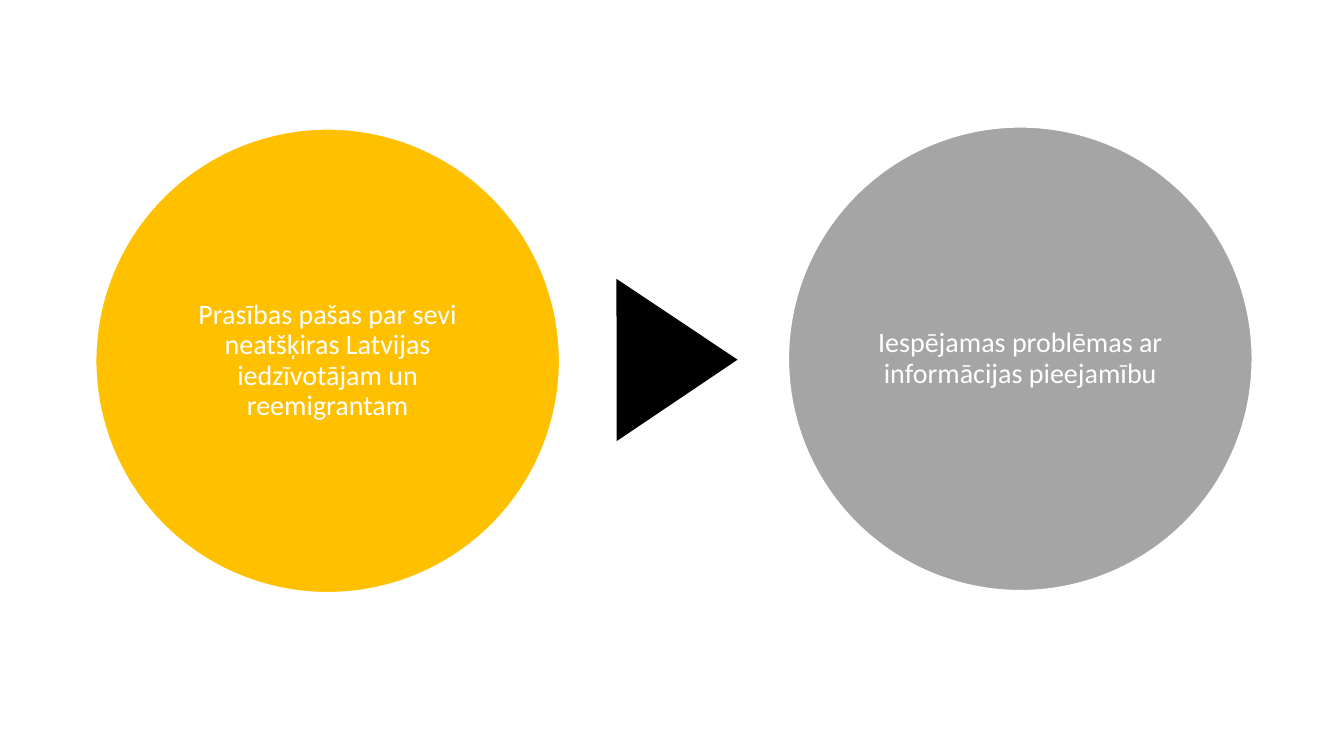
from pptx import Presentation
from pptx.dml.color import RGBColor
from pptx.enum.shapes import MSO_SHAPE
from pptx.enum.text import MSO_ANCHOR, PP_ALIGN
from pptx.util import Inches, Pt

WHITE = RGBColor(0xFF, 0xFF, 0xFF)
BLACK = RGBColor(0, 0, 0)
GOLD = RGBColor(0xFF, 0xC0, 0x00)
GRAY = RGBColor(0xA5, 0xA5, 0xA5)

CIRCLES = [
    (0.95, 1.28, GOLD, "Prasības pašas par sevi neatšķiras Latvijas iedzīvotājam un reemigrantam"),
    (7.82, 1.26, GRAY, "Iespējamas problēmas ar informācijas pieejamību"),
]
DIAMETER = 4.6
ARROW = (5.91, 2.97, 1.61, 1.2)


def add_filled(s, kind, box, color):
    sp = s.shapes.add_shape(kind, *[Inches(v) for v in box])
    sp.shadow.inherit = False
    sp.fill.solid()
    sp.fill.fore_color.rgb = color
    return sp


def add_circle(s, left, top, color, text):
    sp = add_filled(s, MSO_SHAPE.OVAL, (left, top, DIAMETER, DIAMETER), color)
    sp.line.color.rgb = WHITE
    sp.line.width = Pt(1)
    tf = sp.text_frame
    tf.word_wrap = True
    tf.vertical_anchor = MSO_ANCHOR.MIDDLE
    tf.margin_left = tf.margin_right = tf.margin_top = tf.margin_bottom = Inches(0.03)
    p = tf.paragraphs[0]
    p.text = text
    p.alignment = PP_ALIGN.CENTER
    p.line_spacing = 0.9
    p.font.name = "Calibri"
    p.font.size = Pt(20)
    p.font.color.rgb = WHITE


def main():
    prs = Presentation()
    prs.slide_width = Inches(13.33)
    prs.slide_height = Inches(7.5)
    s = prs.slides.add_slide(prs.slide_layouts[6])
    for circle in CIRCLES:
        add_circle(s, *circle)
    arrow = add_filled(s, MSO_SHAPE.ISOSCELES_TRIANGLE, ARROW, BLACK)
    arrow.line.fill.background()
    arrow.rotation = 89.9
    prs.save("out.pptx")


if __name__ == "__main__":
    main()
